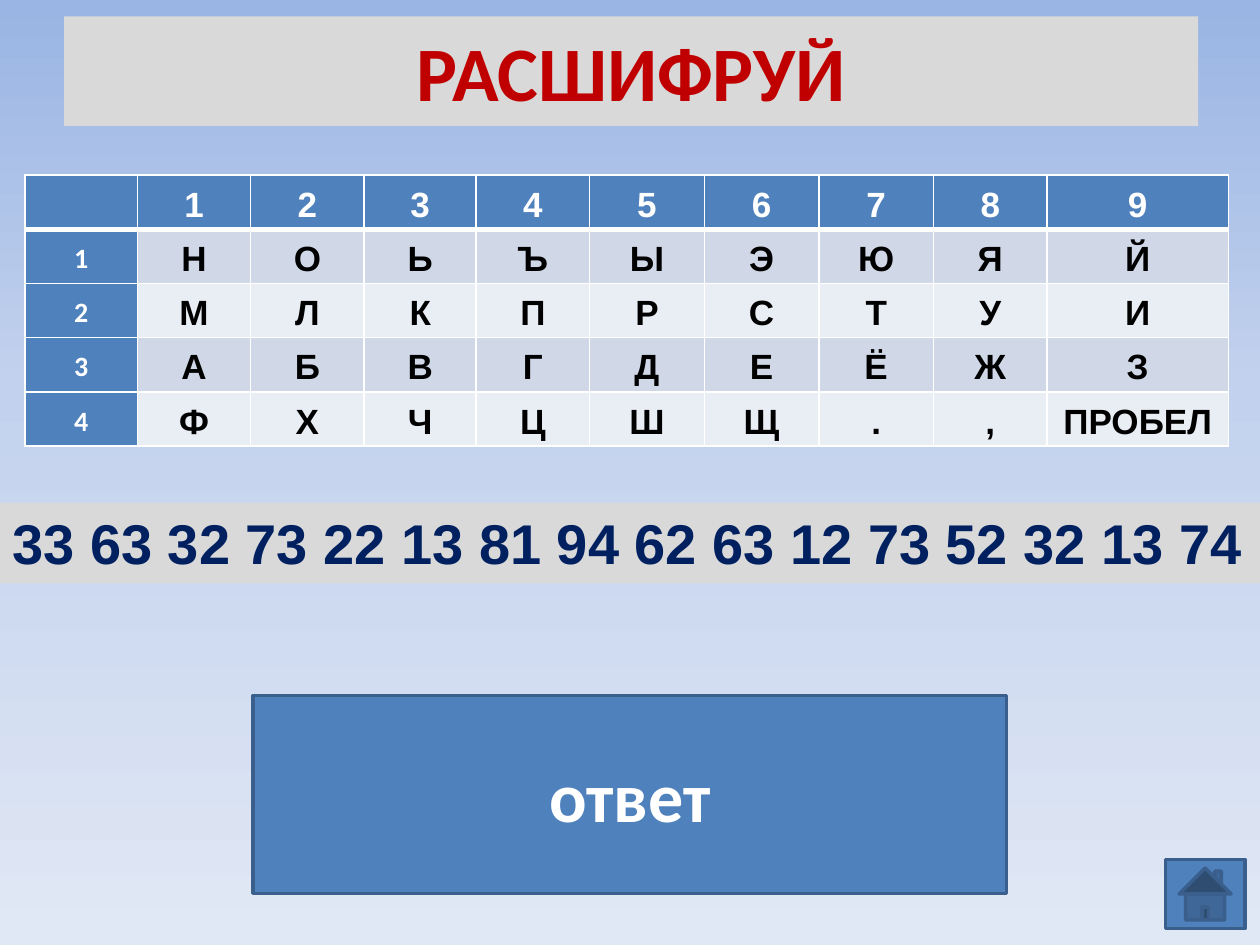
from copy import deepcopy
from typing import NamedTuple

from lxml.etree import SubElement
from pptx import Presentation
from pptx.dml.color import RGBColor
from pptx.enum.shapes import MSO_SHAPE as Preset
from pptx.enum.text import MSO_ANCHOR as Anchor, MSO_AUTO_SIZE as AutoSize, PP_ALIGN as Align
from pptx.oxml.ns import qn
from pptx.util import Inches, Pt

COLORS = {
    "sky_top": "9AB5E4", "sky_middle": "C2D1ED", "sky_bottom": "E1E8F5",
    "panel": "D9D9D9", "title": "C00000", "code": "002060",
    "blue": "4F81BD", "outline": "3A5F8C", "white": "FFFFFF", "black": "000000",
    "odd_row": "D0D8E8", "even_row": "E9EDF4",
}
LETTER_ROWS = ["НОЬЪЫЭЮЯЙ", "МЛКПРСТУИ", "АБВГДЕЁЖЗ", [*"ФХЧЦШЩ.,", "ПРОБЕЛ"]]
COLUMN_WIDTHS = [0.89, 0.9, 0.9, 0.89, 0.9, 0.91, 0.91, 0.91, 0.9, 1.44]
ROW_HEIGHT = 0.43
CODE = "33 63 32 73 22 13 81 94 62 63 12 73 52 32 13 74"


class TextStyle(NamedTuple):
    size: float
    font: str
    color: str
    align: Align = Align.CENTER


class Button(NamedTuple):
    preset: Preset
    left: float
    top: float
    width: float
    height: float


TITLE_STYLE = TextStyle(44, "Calibri", "title")
CODE_STYLE = TextStyle(32, "Arial", "code", Align.LEFT)
ANSWER_STYLE = TextStyle(40, "Calibri", "white")
HEADER_STYLE = TextStyle(20, "Arial", "white")
LABEL_STYLE = TextStyle(16, "Calibri", "white")
LETTER_STYLE = TextStyle(20, "Arial", "black")

ANSWER = Button(Preset.RECTANGLE, 2.01, 5.52, 5.98, 1.57)
HOME = Button(Preset.ACTION_BUTTON_HOME, 9.25, 6.82, 0.63, 0.55)


def rgb(name: str) -> RGBColor:
    return RGBColor.from_string(COLORS[name])


def paint(target, color: str) -> None:
    target.fill.solid()
    target.fill.fore_color.rgb = rgb(color)


def write(frame, text: str, style: TextStyle):
    para = frame.paragraphs[0]
    para.text = text
    para.alignment = style.align
    para.font.size = Pt(style.size)
    para.font.name = style.font
    para.font.bold = True
    para.font.color.rgb = rgb(style.color)
    return para


def paint_background(page) -> None:
    fill = page.background.fill
    fill.gradient()
    fill.gradient_angle = 270
    first_stop = page._element.find(".//" + qn("a:gs"))
    first_stop.addnext(deepcopy(first_stop))
    sky = [("sky_top", 0), ("sky_middle", 0.41), ("sky_bottom", 1)]
    for stop, (color, position) in zip(fill.gradient_stops, sky):
        stop.color.rgb = rgb(color)
        stop.position = position


def add_title(page, text: str) -> None:
    title = page.shapes.title
    title.left, title.top = Inches(0.51), Inches(0.13)
    title.width, title.height = Inches(9), Inches(0.87)
    paint(title, "panel")
    title.text_frame.vertical_anchor = Anchor.MIDDLE
    write(title.text_frame, text, TITLE_STYLE)


def set_borders(cell, widths: dict[str, float]) -> None:
    """Draw white cell borders; widths maps the sides L, R, T, B to points."""
    properties = cell._tc.get_or_add_tcPr()
    for index, (side, width) in enumerate(widths.items()):
        line = SubElement(properties, qn(f"a:ln{side}"), w=str(Pt(width)))
        solid = SubElement(line, qn("a:solidFill"))
        SubElement(solid, qn("a:srgbClr"), val=COLORS["white"])
        properties.insert(index, line)


def style_cell(cell, text: str, row: int, column: int) -> None:
    if row == 0:
        style, fill = HEADER_STYLE, "blue"
    elif column == 0:
        style, fill = LABEL_STYLE, "blue"
    else:
        style, fill = LETTER_STYLE, "odd_row" if row % 2 else "even_row"
    paint(cell, fill)
    cell.vertical_anchor = Anchor.MIDDLE
    cell.margin_left = cell.margin_right = Inches(0.07)
    cell.margin_top = cell.margin_bottom = 0
    write(cell.text_frame, text, style).line_spacing = 1.15
    # The thick rule under the header also is the top edge of the first letter row.
    set_borders(cell, {"L": 1, "R": 1, "T": 3 if row == 1 else 1, "B": 3 if row == 0 else 1})


def add_cipher_table(page) -> None:
    header = ["", *(str(number) for number in range(1, 10))]
    rows = [header] + [[str(number), *letters] for number, letters in enumerate(LETTER_ROWS, 1)]
    table = page.shapes.add_table(
        len(rows), len(header), Inches(0.2), Inches(1.39),
        Inches(sum(COLUMN_WIDTHS)), Inches(ROW_HEIGHT * len(rows)),
    ).table
    for column, width in zip(table.columns, COLUMN_WIDTHS):
        column.width = Inches(width)
    for row, texts in enumerate(rows):
        table.rows[row].height = Inches(ROW_HEIGHT)
        for column, text in enumerate(texts):
            style_cell(table.cell(row, column), text, row, column)


def add_code_band(page) -> None:
    box = page.shapes.add_textbox(0, Inches(3.99), Inches(10), Inches(0.64))
    paint(box, "panel")
    box.text_frame.word_wrap = True
    box.text_frame.auto_size = AutoSize.SHAPE_TO_FIT_TEXT
    write(box.text_frame, CODE, CODE_STYLE)


def add_button(page, button: Button):
    shape = page.shapes.add_shape(
        button.preset, Inches(button.left), Inches(button.top),
        Inches(button.width), Inches(button.height),
    )
    shape.shadow.inherit = False
    paint(shape, "blue")
    shape.line.color.rgb = rgb("outline")
    shape.line.width = Pt(2)
    return shape


def main() -> None:
    deck = Presentation()
    deck.slide_width, deck.slide_height = Inches(10), Inches(7.5)
    page = deck.slides.add_slide(deck.slide_layouts[5])
    paint_background(page)
    add_title(page, "РАСШИФРУЙ")
    add_cipher_table(page)
    add_code_band(page)
    answer = add_button(page, ANSWER)
    answer.text_frame.vertical_anchor = Anchor.MIDDLE
    write(answer.text_frame, "ответ", ANSWER_STYLE)
    add_button(page, HOME)
    deck.save("out.pptx")


if __name__ == "__main__":
    main()
